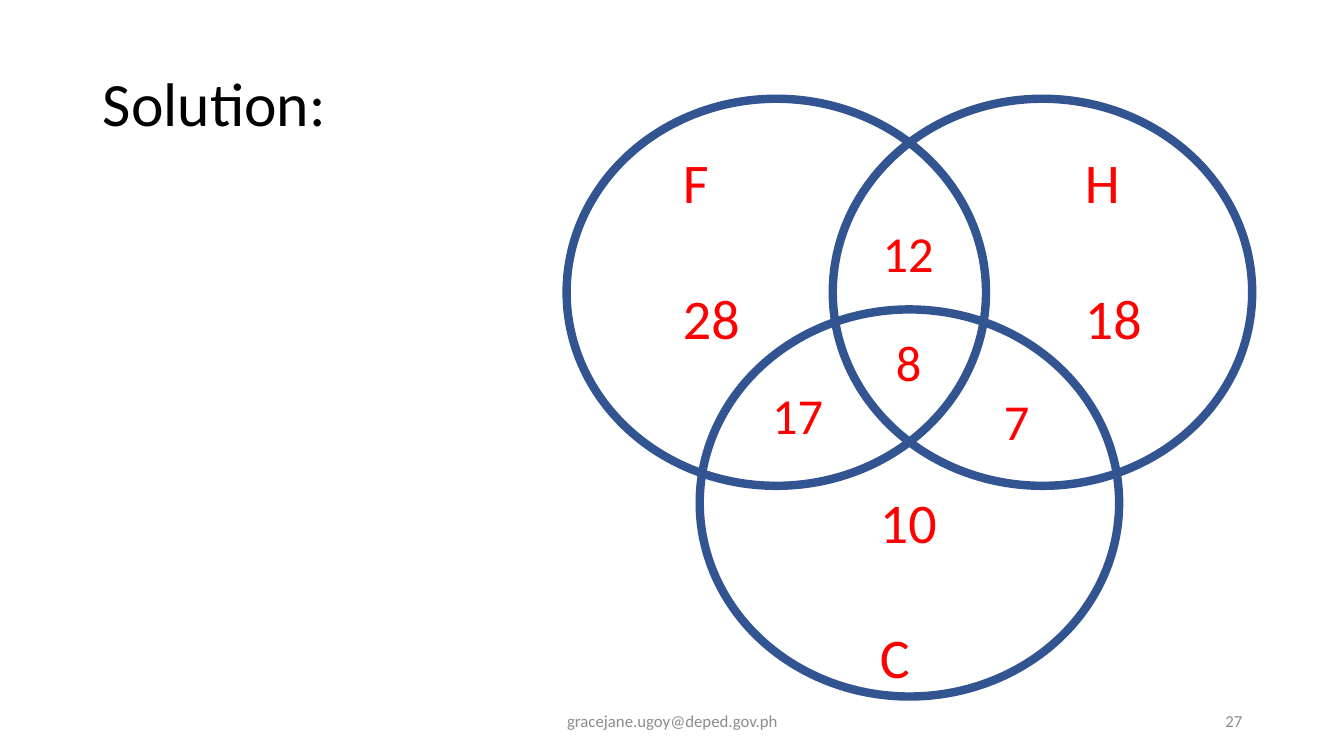
from pptx import Presentation
from pptx import util as u
from pptx.dml.color import RGBColor
from pptx.enum import shapes, text

HUE = {"ring": "325491", "mark": "FF0000", "title": "000000", "foot": "8C8C8C"}
FONT = "Calibri"
WIDE, HIGH = 13.33, 7.5

# Venn grid: rings sit one column or one row apart
LEFT, TOP = 5.62, 0.98
COL, ROW = 1.32, 2.09
RING = (4.16, 3.84)

RINGS = [(0, 0), (2, 0), (1, 1)]
COUNTS = [("8", 2.4, 1.08), ("17", 1.47, 1.33), ("12", 2.3, 0.56), ("7", 3.21, 1.36)]
SETS = [(("F", "28"), 0.8, 0.21), (("H", "18"), 3.82, 0.21), (("10", "C"), 2.28, 1.82)]


def tint(name):
    return RGBColor.from_string(HUE[name])


def spot(col, row):
    return LEFT + col * COL, TOP + row * ROW


def place(shape, x, y, w, h):
    shape.left, shape.top, shape.width, shape.height = map(u.Inches, (x, y, w, h))


def write(shape, lines, size, hue, align=text.PP_ALIGN.LEFT, mid=False,
          wrap=True, gap=0, lead=1.0):
    frame = shape.text_frame
    frame.auto_size = text.MSO_AUTO_SIZE.NONE
    frame.word_wrap = wrap
    frame.vertical_anchor = text.MSO_ANCHOR.MIDDLE if mid else text.MSO_ANCHOR.TOP
    for i, line in enumerate(lines):
        para = frame.add_paragraph() if i else frame.paragraphs[0]
        para.alignment, para.line_spacing = align, lead
        para.space_before = u.Pt(gap if i else 0)
        run = para.add_run()
        run.text = line
        run.font.name, run.font.size = FONT, u.Pt(size)
        run.font.color.rgb = tint(hue)


def label(slide, lines, box, size, hue, **style):
    write(slide.shapes.add_textbox(*map(u.Inches, box)), lines, size, hue, **style)


def ring(slide, col, row):
    box = (*spot(col, row), *RING)
    oval = slide.shapes.add_shape(shapes.MSO_SHAPE.OVAL, *map(u.Inches, box))
    oval.shadow.inherit = False
    oval.fill.background()
    oval.line.color.rgb = tint("ring")
    oval.line.width = u.Pt(6)


def main():
    deck = Presentation()
    deck.slide_width, deck.slide_height = u.Inches(WIDE), u.Inches(HIGH)
    slide = deck.slides.add_slide(deck.slide_layouts[5])

    # Title
    title = slide.shapes.title
    place(title, 0.92, 0.4, 11.5, 1.32)
    write(title, ["Solution:"], 44, "title", mid=True, lead=0.9)

    # Venn diagram
    for col, row in RINGS:
        ring(slide, col, row)
    for count, col, row in COUNTS:
        box = (*spot(col, row), 0.2 + 0.25 * len(count), 0.71)
        label(slide, [count], box, 36, "mark", wrap=False)
    for lines, col, row in SETS:
        box = (*spot(col, row), 0.77, 2.12)
        label(slide, lines, box, 40, "mark", wrap=False, gap=48.8)

    # Footer
    label(slide, ["gracejane.ugoy@deped.gov.ph"], (4.42, 6.95, 4.5, 0.4), 12, "foot",
          align=text.PP_ALIGN.CENTER, mid=True)
    label(slide, ["27"], (9.42, 6.95, 3, 0.4), 12, "foot",
          align=text.PP_ALIGN.RIGHT, mid=True)

    deck.save("out.pptx")


if __name__ == "__main__":
    main()
